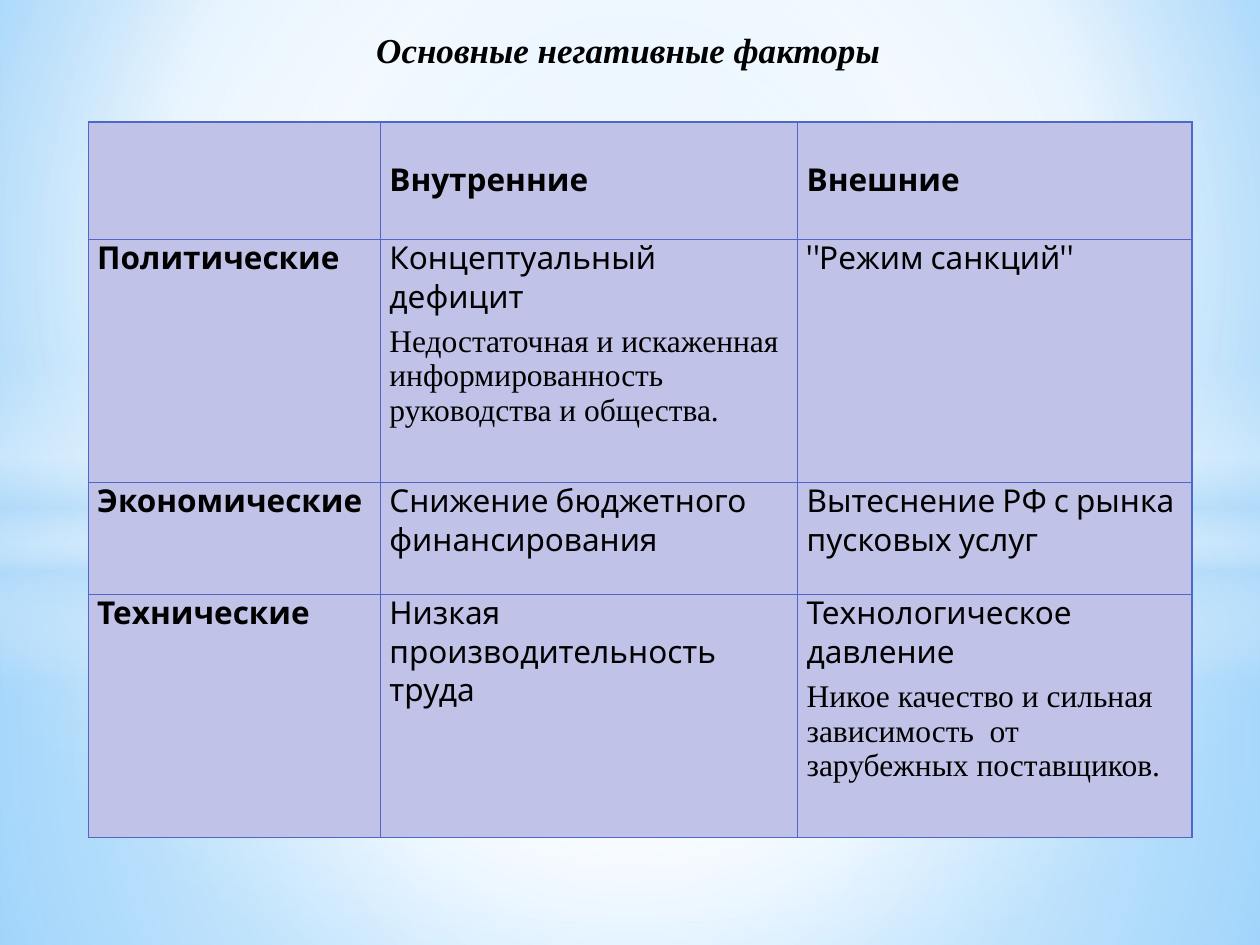
"""Build a slide with a table of the main negative factors."""
import dataclasses
import typing

import lxml.etree
import pptx
import pptx.dml.color
import pptx.enum.shapes
import pptx.enum.text
import pptx.oxml.ns
import pptx.util

Cm = pptx.util.Cm
Pt = pptx.util.Pt
qn = pptx.oxml.ns.qn
Align = pptx.enum.text.PP_ALIGN
Anchor = pptx.enum.text.MSO_ANCHOR
Preset = pptx.enum.shapes.MSO_SHAPE

COLORS = {
    "text": "000000",
    "cell": "C1C2E8",
    "border": "4E67C8",
    "white": "FFFFFF",
    "haze": "B4DCFA",
    "sky": "9ED5FF",
    "deep": "5BB9FF",
}
SERIF = "Times New Roman"
SANS = "Cabin"


class Stop(typing.NamedTuple):
    position: int
    color: str
    opacity: int = 100


@dataclasses.dataclass
class Gradient:
    stops: list[Stop]
    focus: tuple[int, int, int, int] | None = (50, 50, 50, 50)


@dataclasses.dataclass
class Glow:
    preset: Preset
    top: float
    height: float
    gradient: Gradient


@dataclasses.dataclass
class Entry:
    text: str
    detail: str = ""
    bold: bool = False
    space_after: float = 0
    anchor: Anchor = Anchor.TOP


BACKDROP = Gradient(
    [Stop(0, "sky"), Stop(60, "white"), Stop(100, "deep")], (20, 10, 20, 60)
)
GLOWS = [
    Glow(Preset.RECTANGLE, 10.74, 8.31, Gradient(
        [Stop(0, "white", 91), Stop(37, "white", 76), Stop(100, "haze", 79)])),
    Glow(Preset.RECTANGLE, 0, 10.74, Gradient(
        [Stop(0, "white", 89), Stop(48, "white", 62), Stop(100, "haze", 79)])),
    Glow(Preset.RECTANGLE, 7.37, 6.35, Gradient(
        [Stop(0, "white", 0), Stop(29, "white", 30), Stop(45, "haze", 40),
         Stop(55, "white", 26), Stop(65, "haze", 60), Stop(100, "white", 0)], None)),
    Glow(Preset.OVAL, 4.45, 14.17, Gradient(
        [Stop(0, "white"), Stop(54, "white", 0)])),
]

COLUMN_WIDTHS = [5.89, 8.41, 7.95]
ROW_HEIGHTS = [2.36, 4.9, 2.26, 4.9]
HEADINGS = ["", "Внутренние", "Внешние"]
FACTORS = [
    [Entry(heading, bold=True, anchor=Anchor.MIDDLE) for heading in HEADINGS],
    [
        Entry("Политические", bold=True, space_after=4.5),
        Entry("Концептуальный дефицит",
              "Недостаточная и искаженная информированность руководства и общества.",
              space_after=4.5),
        Entry("\"Режим санкций\"", space_after=4.5),
    ],
    [
        Entry("Экономические", bold=True),
        Entry("Снижение бюджетного финансирования"),
        Entry("Вытеснение РФ с рынка пусковых услуг"),
    ],
    [
        Entry("Технические", bold=True, space_after=4.5),
        Entry("Низкая производительность труда", space_after=4.5),
        Entry("Технологическое давление",
              "Никое качество и сильная зависимость  от зарубежных поставщиков.",
              space_after=4.5),
    ],
]


def apply_gradient(fill, owner, gradient: Gradient) -> None:
    """Replace the fill of the owner element with a gradient."""
    fill.solid()
    solid = owner.find(".//" + qn("a:solidFill"))
    grad = lxml.etree.Element(qn("a:gradFill"), rotWithShape="1")
    stops = lxml.etree.SubElement(grad, qn("a:gsLst"))
    for stop in gradient.stops:
        mark = lxml.etree.SubElement(stops, qn("a:gs"), pos=str(stop.position * 1000))
        color = lxml.etree.SubElement(mark, qn("a:srgbClr"), val=COLORS[stop.color])
        if stop.opacity < 100:
            lxml.etree.SubElement(color, qn("a:alpha"), val=str(stop.opacity * 1000))
    if gradient.focus:
        circle = lxml.etree.SubElement(grad, qn("a:path"), path="circle")
        sides = {side: str(share * 1000) for side, share in zip("ltrb", gradient.focus)}
        lxml.etree.SubElement(circle, qn("a:fillToRect"), **sides)
    else:
        lxml.etree.SubElement(grad, qn("a:lin"), ang="5400000", scaled="0")
    solid.getparent().replace(solid, grad)


def write(paragraph, text: str, *, size: float = 18, font: str = SANS,
          bold: bool = False, italic: bool = False,
          align: Align = Align.LEFT, space_after: float = 0) -> None:
    """Write formatted text into a paragraph."""
    paragraph.alignment = align
    paragraph.space_after = Pt(space_after)
    run = paragraph.add_run()
    run.text = text
    run.font.size = Pt(size)
    run.font.name = font
    run.font.bold = bold
    run.font.italic = italic
    run.font.color.rgb = pptx.dml.color.RGBColor.from_string(COLORS["text"])


def draw_glow(slide, glow: Glow, width: int) -> None:
    """Draw one full-width gradient shape of the backdrop."""
    shape = slide.shapes.add_shape(glow.preset, 0, Cm(glow.top), width, Cm(glow.height))
    shape.shadow.inherit = False
    shape.line.fill.background()
    apply_gradient(shape.fill, shape.element.spPr, glow.gradient)


def outline_cell(cell) -> None:
    """Give a cell a thin line on all four sides."""
    properties = cell._tc.get_or_add_tcPr()
    for index, side in enumerate(("a:lnL", "a:lnR", "a:lnT", "a:lnB")):
        line = lxml.etree.Element(qn(side), w=str(Pt(0.75)))
        fill = lxml.etree.SubElement(line, qn("a:solidFill"))
        lxml.etree.SubElement(fill, qn("a:srgbClr"), val=COLORS["border"])
        properties.insert(index, line)


def fill_cell(cell, entry: Entry) -> None:
    """Format a cell and write its entry."""
    cell.fill.solid()
    cell.fill.fore_color.rgb = pptx.dml.color.RGBColor.from_string(COLORS["cell"])
    cell.margin_left = cell.margin_right = Cm(0.18)
    cell.margin_top = cell.margin_bottom = 0
    cell.vertical_anchor = entry.anchor
    outline_cell(cell)
    if entry.text:
        write(cell.text_frame.paragraphs[0], entry.text, bold=entry.bold,
              align=Align.JUSTIFY if entry.bold else Align.LEFT,
              space_after=entry.space_after)
    if entry.detail:
        write(cell.text_frame.add_paragraph(), entry.detail, font=SERIF,
              space_after=entry.space_after)


def draw_factors(slide) -> None:
    """Draw the table of factors."""
    table = slide.shapes.add_table(
        len(ROW_HEIGHTS), len(COLUMN_WIDTHS), Cm(1.78), Cm(2.46),
        Cm(sum(COLUMN_WIDTHS)), Cm(sum(ROW_HEIGHTS))).table
    table.first_row = table.horz_banding = False
    for column, width in zip(table.columns, COLUMN_WIDTHS):
        column.width = Cm(width)
    for row, height, entries in zip(table.rows, ROW_HEIGHTS, FACTORS):
        row.height = Cm(height)
        for cell, entry in zip(row.cells, entries):
            fill_cell(cell, entry)


def draw_title(slide) -> None:
    """Draw the slide title."""
    frame = slide.shapes.add_textbox(Cm(4.65), Cm(0.43), Cm(16.03), Cm(1.12)).text_frame
    frame.word_wrap = True
    frame.vertical_anchor = Anchor.MIDDLE
    write(frame.paragraphs[0], "Основные негативные факторы", size=20, font=SERIF,
          bold=True, italic=True, align=Align.CENTER)


def main() -> None:
    """Build and save the slide."""
    deck = pptx.Presentation()
    deck.slide_width, deck.slide_height = Cm(25.4), Cm(19.05)
    slide = deck.slides.add_slide(deck.slide_layouts[6])
    apply_gradient(slide.background.fill, slide.element, BACKDROP)
    for glow in GLOWS:
        draw_glow(slide, glow, deck.slide_width)
    draw_factors(slide)
    draw_title(slide)
    deck.save("out.pptx")


if __name__ == "__main__":
    main()
